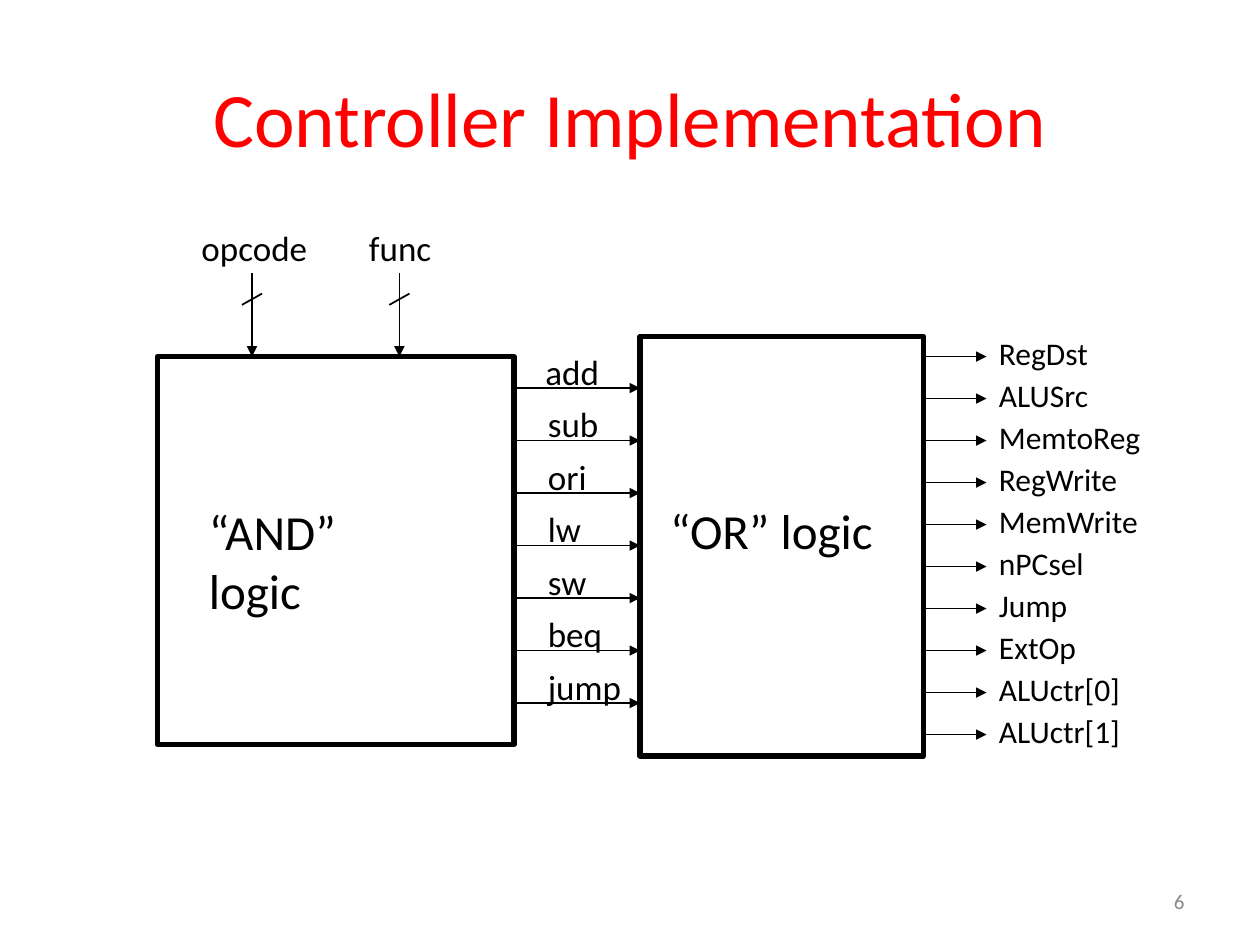
from lxml import etree
from pptx import Presentation
from pptx.dml.color import RGBColor
from pptx.enum.shapes import MSO_CONNECTOR, MSO_SHAPE
from pptx.enum.text import MSO_ANCHOR, PP_ALIGN
from pptx.oxml.ns import qn
from pptx.util import Inches, Pt

STRAIGHT = MSO_CONNECTOR.STRAIGHT
RECTANGLE = MSO_SHAPE.RECTANGLE
LEFT, CENTER, RIGHT = PP_ALIGN.LEFT, PP_ALIGN.CENTER, PP_ALIGN.RIGHT
TOP, MIDDLE = MSO_ANCHOR.TOP, MSO_ANCHOR.MIDDLE

# Content; the numbers beside the labels are box widths in inches
TITLE = "Controller Implementation"
PAGE_NUMBER = "6"
INSTRUCTIONS = [("add", 0.63), ("sub", 0.61), ("ori", 0.51), ("lw", 0.47),
                ("sw", 0.51), ("beq", 0.64), ("jump", 0.8)]
SIGNALS = [("RegDst", 0.92), ("ALUSrc", 0.92), ("MemtoReg", 1.34),
           ("RegWrite", 1.15), ("MemWrite", 1.34), ("nPCsel", 0.88),
           ("Jump", 0.75), ("ExtOp", 0.82), ("ALUctr[0]", 1.17),
           ("ALUctr[1]", 1.17)]
# text, label left, label width, arrow x
INPUTS = [("opcode", 1.5, 1.05, 2), ("func", 2.83, 0.73, 3.17)]
# text, block (left, top, width, height), label (left, top, width), wrap
BLOCKS = [("“AND” logic", (1.25, 2.83, 2.83, 3.08), (1.56, 3.93, 2), True),
          ("“OR” logic", (5.08, 2.67, 2.25, 3.33), (5.22, 3.92, 1.83), False)]

THEME = {
    "font": "Calibri",
    "title": RGBColor(0xFF, 0x00, 0x00),
    "ink": RGBColor(0x00, 0x00, 0x00),
    "muted": RGBColor(0x89, 0x89, 0x89),
    "title_size": 44, "block_size": 28, "label_size": 20,
    "signal_size": 18, "number_size": 12,
    "block_line": 3, "wire_line": 1,
}

# Layout rules in inches
INSTRUCTION_TOP, INSTRUCTION_STEP = 3.08, 5 / 12
SIGNAL_TOP, SIGNAL_STEP = 2.83, 1 / 3
AND_RIGHT, OR_LEFT, OR_RIGHT, SIGNAL_LEFT = 4.08, 5.08, 7.33, 7.83
INPUT_TOP, INPUT_BOTTOM = 2.17, 2.83


def write(shape, text, size, color, align=LEFT, anchor=TOP, wrap=False):
    frame = shape.text_frame
    frame.text = text
    frame.word_wrap = wrap
    frame.vertical_anchor = anchor
    para = frame.paragraphs[0]
    para.alignment = align
    font = para.runs[0].font
    font.name, font.size, font.color.rgb = THEME["font"], Pt(size), color


def add_label(page, text, left, top, width, size, height=0.44, **options):
    box = page.shapes.add_textbox(*map(Inches, (left, top, width, height)))
    write(box, text, size, options.pop("color", THEME["ink"]), **options)


def add_wire(page, start, end, arrow=True):
    wire = page.shapes.add_connector(STRAIGHT, *map(Inches, start + end))
    wire.line.color.rgb = THEME["ink"]
    wire.line.width = Pt(THEME["wire_line"])
    if arrow:
        etree.SubElement(wire.line._get_or_add_ln(), qn("a:tailEnd"), type="triangle")
    etree.SubElement(wire._element.spPr, qn("a:effectLst"))


def add_block(page, place):
    block = page.shapes.add_shape(RECTANGLE, *map(Inches, place))
    block.shadow.inherit = False
    block.fill.background()
    block.line.color.rgb = THEME["ink"]
    block.line.width = Pt(THEME["block_line"])


def main():
    deck = Presentation()
    deck.slide_width, deck.slide_height = Inches(10), Inches(7.5)
    page = deck.slides.add_slide(deck.slide_layouts[5])

    # Title
    title = page.shapes.title
    title.left, title.top, title.width, title.height = map(Inches, (0.5, 0.3, 9, 1.25))
    write(title, TITLE, THEME["title_size"], THEME["title"], CENTER, MIDDLE, True)

    # Logic blocks
    for text, place, (left, top, width), wrap in BLOCKS:
        add_block(page, place)
        add_label(page, text, left, top, width, THEME["block_size"],
                  height=0.57, wrap=wrap)

    # Inputs with bus slashes
    for text, left, width, x in INPUTS:
        add_label(page, text, left, 1.75, width, THEME["label_size"])
        add_wire(page, (x, INPUT_TOP), (x, INPUT_BOTTOM))
        add_wire(page, (x - 0.08, 2.42), (x + 0.08, 2.33), arrow=False)

    # Instruction lines between the blocks
    for row, (text, width) in enumerate(INSTRUCTIONS):
        y = INSTRUCTION_TOP + row * INSTRUCTION_STEP
        add_wire(page, (AND_RIGHT, y), (OR_LEFT, y))
        left = 4.23 if row == 0 else 4.25
        add_label(page, text, left, y - 0.35, width, THEME["label_size"])

    # Control signals
    for row, (text, width) in enumerate(SIGNALS):
        y = SIGNAL_TOP + row * SIGNAL_STEP
        add_wire(page, (OR_RIGHT, y), (SIGNAL_LEFT, y))
        add_label(page, text, SIGNAL_LEFT, y - 0.23, width,
                  THEME["signal_size"], height=0.4)

    # Page number
    add_label(page, PAGE_NUMBER, 7.17, 6.95, 2.33, THEME["number_size"], height=0.4,
              color=THEME["muted"], align=RIGHT, anchor=MIDDLE, wrap=True)

    deck.save("out.pptx")


if __name__ == "__main__":
    main()
